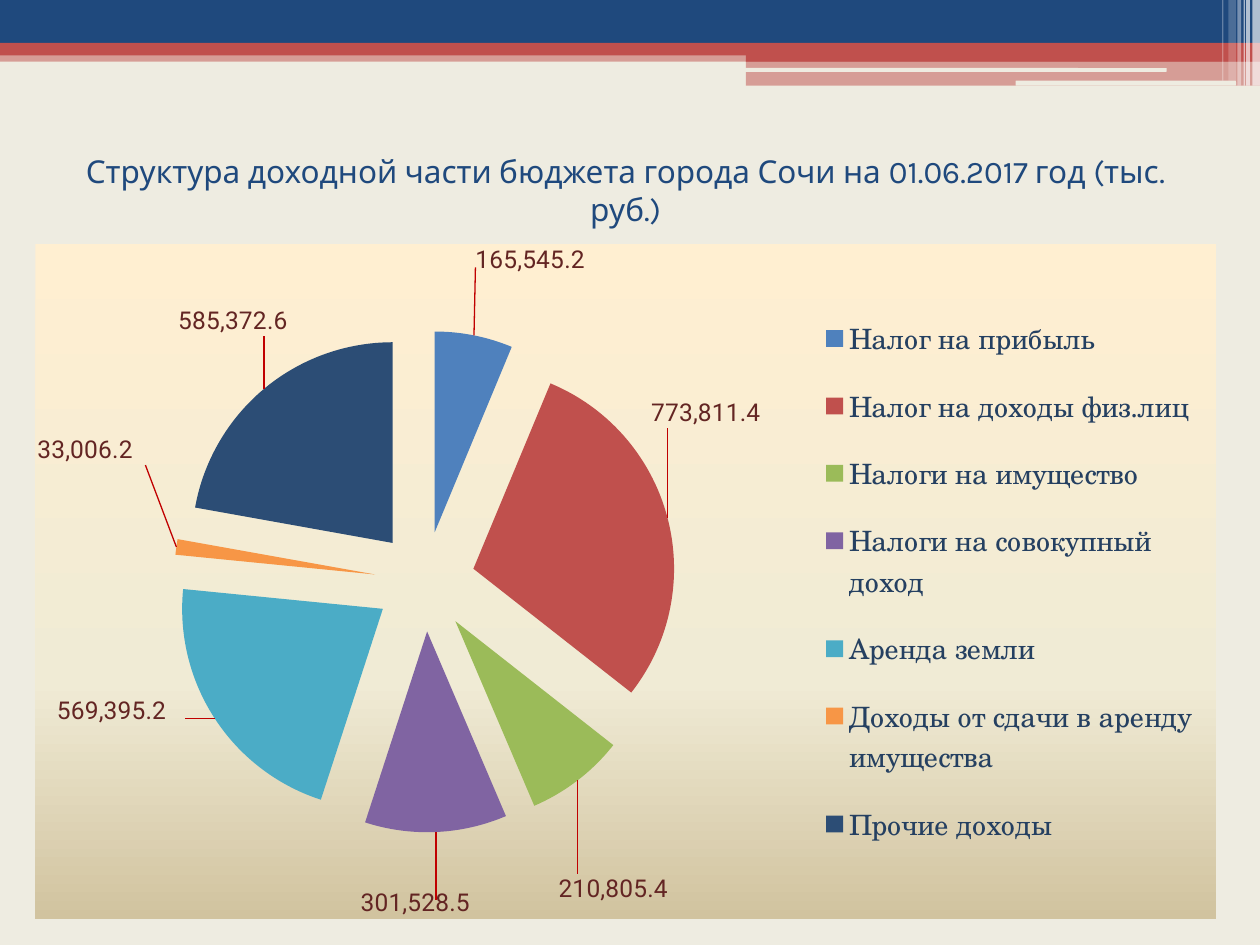
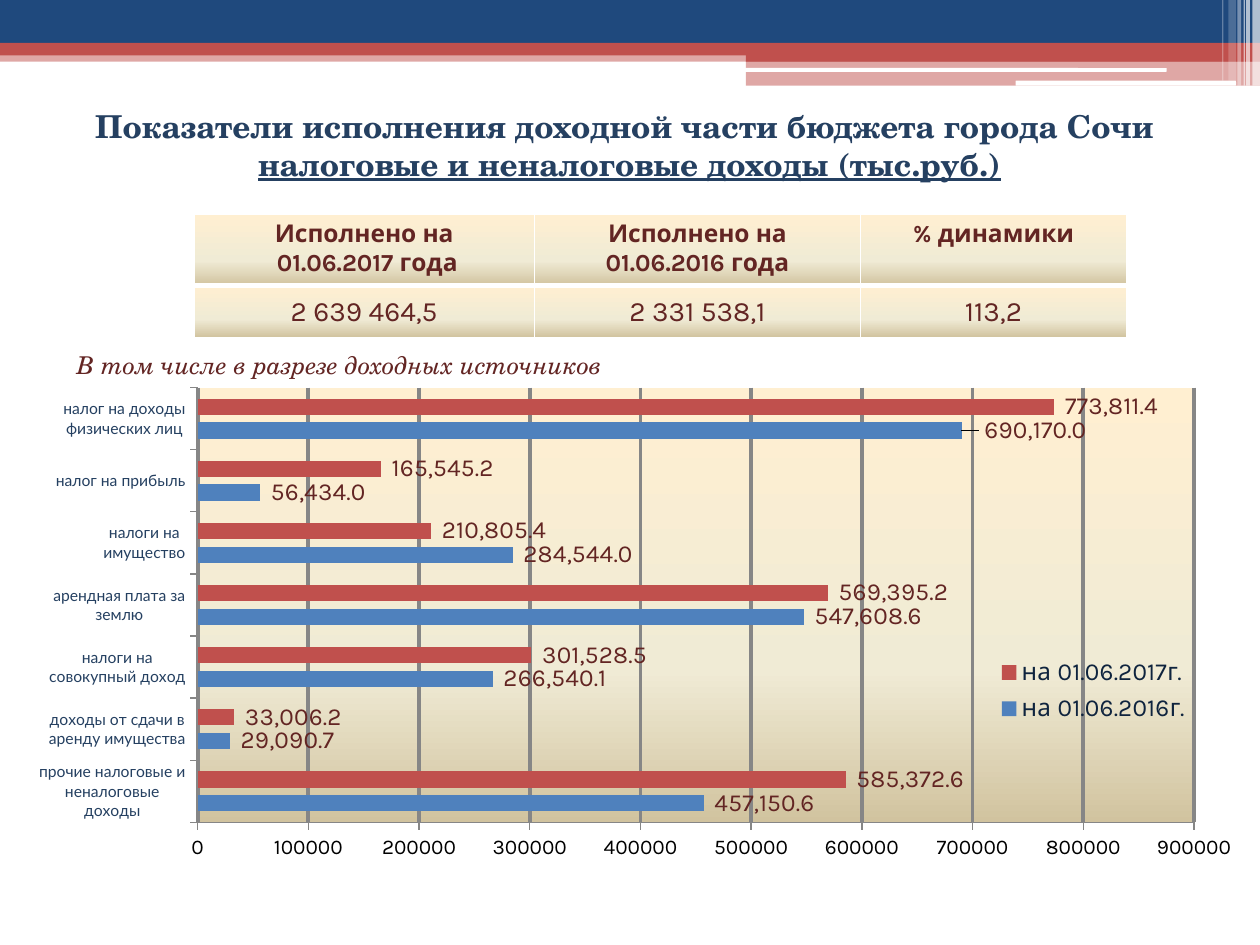
import pptx
import pptx.chart.data
import pptx.dml.color
import pptx.enum.chart
import pptx.enum.shapes
import pptx.enum.text
import pptx.oxml
import pptx.oxml.ns
import pptx.util

C = {"navy": "1F497D", "red": "C0504D", "white": "FFFFFF", "cream": "EEECE1",
     "ink": "254061", "wine": "632523", "dark": "0F243E", "blue": "4F81BD",
     "green": "9BBB59", "violet": "8064A2", "teal": "4BACC6", "orange": "F79646",
     "steel": "2C4D75", "black": "000000", "grid": "868686", "leader": "C00000"}
SERIF, SANS = "TeX Gyre Schola", "Karla"
NS = pptx.oxml.ns.nsdecls("a", "c")
STOPS = "".join(f'<a:gs pos="{pos}000"><a:srgbClr val="{color}"/></a:gs>'
                for pos, color in ((0, "FFEFD1"), (65, "F0EBD5"), (100, "D1C39F")))
GRADIENT = f'<a:gradFill {NS}><a:gsLst>{STOPS}</a:gsLst><a:lin ang="5400000" scaled="0"/></a:gradFill>'
PANEL = f"<c:spPr {NS}>{GRADIENT}<a:ln><a:noFill/></a:ln></c:spPr>"

rgb = pptx.dml.color.RGBColor.from_string
qn = pptx.oxml.ns.qn
parse = pptx.oxml.parse_xml
CHART = pptx.enum.chart
CENTER = pptx.enum.text.PP_ALIGN.CENTER
MIDDLE = pptx.enum.text.MSO_ANCHOR.MIDDLE

prs = pptx.Presentation()
prs.slide_width, prs.slide_height = pptx.util.Inches(10), pptx.util.Inches(7.5)
CELL = prs.slide_width / 100  # square grid of 100 columns by 75 rows


def box(*cells):
    """Turn grid columns and rows into slide lengths."""
    return [round(v * CELL) for v in cells]


def place(parent, index, x, y, w=None, h=None, inner=False):
    """Give a chart part a manual layout in shares of the chart; without w, x and y are offsets."""
    for old in parent.findall(qn("c:layout")):
        parent.remove(old)
    parts = [("layoutTarget", "inner")] if inner else []
    if w is not None:
        parts += [("xMode", "edge"), ("yMode", "edge")]
    parts += [("x", x), ("y", y), ("w", w), ("h", h)]
    body = "".join(f'<c:{tag} val="{v}"/>' for tag, v in parts if v is not None)
    parent.insert(index, parse(f"<c:layout {NS}><c:manualLayout>{body}</c:manualLayout></c:layout>"))


# Header bands: left, top, width, height, colour, opacity in percent
BANDS = [(0, 4, 100, 0.9, "red", 50), (0, 0, 100, 3.4, "navy", 100),
         (0, 3.4, 100, 1, "red", 100), (59.2, 3.9, 40.8, 1, "red", 100),
         (59.2, 4.8, 40.8, 2, "red", 50), (59.1, 5.4, 33.5, 0.3, "back", 100),
         (80.6, 6.4, 17.5, 0.4, "back", 100), (99.4, 0, 0.6, 6.8, "white", 65),
         (98.9, 0, 0.3, 6.8, "white", 65), (98.7, 0, 0.1, 6.8, "white", 60),
         (98.2, 0, 0.3, 6.8, "white", 40), (97.5, 0, 0.6, 6.4, "white", 20),
         (97, 0, 0.1, 6.4, "white", 30)]
SHAPE = pptx.enum.shapes.MSO_SHAPE
slides = []
for back in ("cream", "white"):
    s = prs.slides.add_slide(prs.slide_layouts[6])
    s.background.fill.solid()
    s.background.fill.fore_color.rgb = rgb(C[back])
    for *cells, color, opacity in BANDS:
        kind = SHAPE.ROUNDED_RECTANGLE if color == "back" else SHAPE.RECTANGLE
        sp = s.shapes.add_shape(kind, *box(*cells))
        sp.shadow.inherit = False
        sp.line.fill.background()
        sp.fill.solid()
        sp.fill.fore_color.rgb = rgb(C[back if color == "back" else color])
        if opacity < 100:
            tint = sp.fill._xPr.find(".//" + qn("a:srgbClr"))
            tint.append(parse(f'<a:alpha {NS} val="{opacity}000"/>'))
    slides.append(s)
income, execution = slides
fonts = []  # font, size, colour, typeface

# Slide 1: income structure
tf = income.shapes.add_textbox(*box(2.8, 9.2, 93.7, 11.7)).text_frame
tf.word_wrap = True
tf.vertical_anchor = MIDDLE
p = tf.paragraphs[0]
p.text = "Структура доходной части бюджета города Сочи на 01.06.2017 год (тыс. руб.)"
p.alignment = CENTER
fonts.append((p.runs[0].font, 18, "navy", SANS))

# Source, 2017 value, slice colour, label offset
SLICES = [("Налог на прибыль", 165545.2, "blue", 0, -0.09),
          ("Налог на доходы физ.лиц", 773811.4, "red", -0.02, -0.13),
          ("Налоги на имущество", 210805.4, "green", -0.02, 0.13),
          ("Налоги на совокупный доход", 301528.5, "violet", -0.01, 0.09),
          ("Аренда земли", 569395.2, "teal", -0.02, -0.04),
          ("Доходы от сдачи в аренду имущества", 33006.2, "orange", -0.02, -0.12),
          ("Прочие доходы", 585372.6, "steel", 0.04, -0.07)]
PIE_FORMAT = "#,##0.0_р_."
data = pptx.chart.data.CategoryChartData()
data.categories = [row[0] for row in SLICES]
data.add_series("Series 1", [row[1] for row in SLICES])
pie = income.shapes.add_chart(CHART.XL_CHART_TYPE.PIE, *box(2.8, 19.4, 93.7, 53.5), data).chart
pie.has_title = False
pie.plots[0].vary_by_categories = True
ser = pie.plots[0].series[0]
labels = ser.data_labels
labels.show_value = True
labels.number_format, labels.number_format_is_linked = PIE_FORMAT, False
fonts.append((labels.font, 14, "wine", "Roboto"))
for i, (_, _, color, dx, dy) in enumerate(SLICES):
    point = ser.points[i]
    point.format.fill.solid()
    point.format.fill.fore_color.rgb = rgb(C[color])
    point.data_label.position = CHART.XL_LABEL_POSITION.OUTSIDE_END
    fonts.append((point.data_label.font, 14, "wine", "Roboto"))
    label = labels._element.findall(qn("c:dLbl"))[i]
    place(label, 1, dx, dy)
    label.insert(2, parse(f'<c:numFmt {NS} formatCode="{PIE_FORMAT}" sourceLinked="0"/>'))
for point in ser._element.findall(qn("c:dPt")):
    point.find(qn("c:spPr")).addprevious(parse(f'<c:explosion {NS} val="25"/>'))
leader = labels._element.find(qn("c:showLeaderLines"))
if leader is None:
    leader = parse(f'<c:showLeaderLines {NS} val="1"/>')
    labels._element.append(leader)
leader.set("val", "1")
leader.addnext(parse(f'<c:leaderLines {NS}><c:spPr><a:ln w="9525"><a:solidFill><a:srgbClr val="{C["leader"]}"/>'
                     '</a:solidFill></a:ln></c:spPr></c:leaderLines>'))
pie._chartSpace.find(qn("c:chart")).addnext(parse(PANEL))

# Slide 2: execution by source
SOURCES = [("прочие налоговые и неналоговые доходы", 457150.6, 585372.6),
           ("доходы от сдачи в аренду имущества", 29090.7, 33006.2),
           ("налоги на совокупный доход", 266540.1, 301528.5),
           ("арендная плата за землю", 547608.6, 569395.2),
           ("налоги на имущество", 284544, 210805.4),
           ("налог на прибыль", 56434, 165545.2),
           ("налог на доходы физических лиц", 690170, 773811.4)]
BAR_FORMAT = "_-* #,##0.0_р_._-"
data = pptx.chart.data.CategoryChartData()
data.categories = [row[0] for row in SOURCES]
for column, year in enumerate((2016, 2017), 1):
    data.add_series(f"на 01.06.{year}г.", [row[column] for row in SOURCES])
BARS_WIDTH = 95.7
bars = execution.shapes.add_chart(CHART.XL_CHART_TYPE.BAR_CLUSTERED, *box(3.1, 29.4, BARS_WIDTH, 45.4), data).chart
bars.has_title = False
plot = bars.plots[0]
plot.vary_by_categories = False
plot.gap_width, plot.overlap = 134, -45
for ser, color in zip(plot.series, ("blue", "red")):
    ser.format.fill.solid()
    ser.format.fill.fore_color.rgb = rgb(C[color])
    labels = ser.data_labels
    labels.show_value = True
    labels.position = CHART.XL_LABEL_POSITION.OUTSIDE_END
    labels.number_format, labels.number_format_is_linked = BAR_FORMAT, False
    fonts.append((labels.font, 14, "wine", SANS))
top_label = plot.series[0].points[6].data_label
top_label.position = CHART.XL_LABEL_POSITION.OUTSIDE_END
fonts.append((top_label.font, 14, "wine", SANS))
labels = plot.series[0].data_labels._element
label = labels.find(qn("c:dLbl"))
place(label, 1, 0.01, 0)
label.insert(2, parse(f'<c:numFmt {NS} formatCode="{BAR_FORMAT}" sourceLinked="0"/>'))
for leader in labels.findall(qn("c:showLeaderLines")):
    labels.remove(leader)
labels.append(parse(f'<c:extLst {NS}><c:ext uri="{{CE6537A1-D6FC-4f65-9D91-7224C49458BB}}" '
                    'xmlns:c15="http://schemas.microsoft.com/office/drawing/2012/chart">'
                    '<c15:showLeaderLines val="0"/></c:ext></c:extLst>'))

values = bars.value_axis
values.minimum_scale, values.maximum_scale, values.major_unit = 0, 900000, 100000
values.tick_labels.number_format, values.tick_labels.number_format_is_linked = "General", False
values.has_major_gridlines = True
for line, width in ((values.major_gridlines.format.line, 2.25), (values.format.line, 0.75),
                    (bars.category_axis.format.line, 0.75)):
    line.color.rgb = rgb(C["grid"])
    line.width = pptx.util.Pt(width)
for axis, size, color, face in ((values, 12, "black", SANS), (bars.category_axis, 9, "ink", "Lato")):
    axis.major_tick_mark = CHART.XL_TICK_MARK.OUTSIDE
    fonts.append((axis.tick_labels.font, size, color, face))
bars._chartSpace.chart.plotArea.append(parse(PANEL))

for chart, plot_area, legend_area, size, color, face in (
        (pie, (0.16, 0.2, 0.34, 0.6), (0.66, 0.07, 0.33, 0.86), 16, "ink", SERIF),
        (bars, (12.15 / BARS_WIDTH, 0.03, 79.5 / BARS_WIDTH, 0.76),
         (75 / BARS_WIDTH, 0.49, 0.18, 0.14), 14, "dark", SANS)):
    chart.has_legend = True
    chart.legend.position = CHART.XL_LEGEND_POSITION.RIGHT
    chart.legend.include_in_layout = False
    place(chart.legend._element, 1, *legend_area)
    place(chart._chartSpace.chart.plotArea, 0, *plot_area, inner=True)
    fonts += [(chart.font, 18, "black", SERIF), (chart.legend.font, size, color, face)]

tf = execution.shapes.add_textbox(*box(3.1, 8, 93.7, 7.1)).text_frame
tf.word_wrap = True
tf.text = "Показатели исполнения доходной части бюджета города Сочи \nналоговые и неналоговые доходы (тыс.руб.)"
for p in tf.paragraphs:
    p.alignment = CENTER
    p.runs[0].font.bold = True
    fonts.append((p.runs[0].font, 18, "ink", SERIF))
tf.paragraphs[1].runs[0].font.underline = True

TOTALS = [("Исполнено на\n 01.06.2017 года", "Исполнено на 01.06.2016 года", "% динамики"),
          ("2 639 464,5", "2 331 538,1", "113,2")]
table = execution.shapes.add_table(2, 3, *box(15.4, 17, 74, 9.7)).table
table.first_row = table.horz_banding = False
for column, width in zip(table.columns, box(27, 25.9, 21.1)):
    column.width = width
for row, height in zip(table.rows, box(5.6, 4.1)):
    row.height = height
for i, row in enumerate(TOTALS):
    for j, text in enumerate(row):
        cell = table.cell(i, j)
        cell.text = text
        if i:
            cell.vertical_anchor = MIDDLE
            cell.margin_left, cell.margin_top, cell.margin_right, cell.margin_bottom = box(0.1, 0.1, 0.1, 0)
        for p in cell.text_frame.paragraphs:
            p.alignment = CENTER
            p.runs[0].font.bold = i == 0
            fonts.append((p.runs[0].font, 16 if i else 14, "wine", SANS))
        tcPr = cell._tc.get_or_add_tcPr()
        for side in "LRTB":
            thick = (i, side) in ((0, "B"), (1, "T"))
            tcPr.append(parse(f'<a:ln{side} {NS} w="{38100 if thick else 12700}"><a:solidFill>'
                              f'<a:srgbClr val="{C["white"]}"/></a:solidFill></a:ln{side}>'))
        tcPr.append(parse(GRADIENT))

tf = execution.shapes.add_textbox(*box(5.1, 27.3, 47.2, 3.4)).text_frame
tf.word_wrap = True
tf.text = "В том числе в разрезе доходных источников"
r = tf.paragraphs[0].runs[0]
r.font.italic = True
fonts.append((r.font, 14, "wine", SERIF))

for font, size, color, face in fonts:
    font.size, font.name = pptx.util.Pt(size), face
    font.color.rgb = rgb(C[color])

prs.save("out.pptx")
